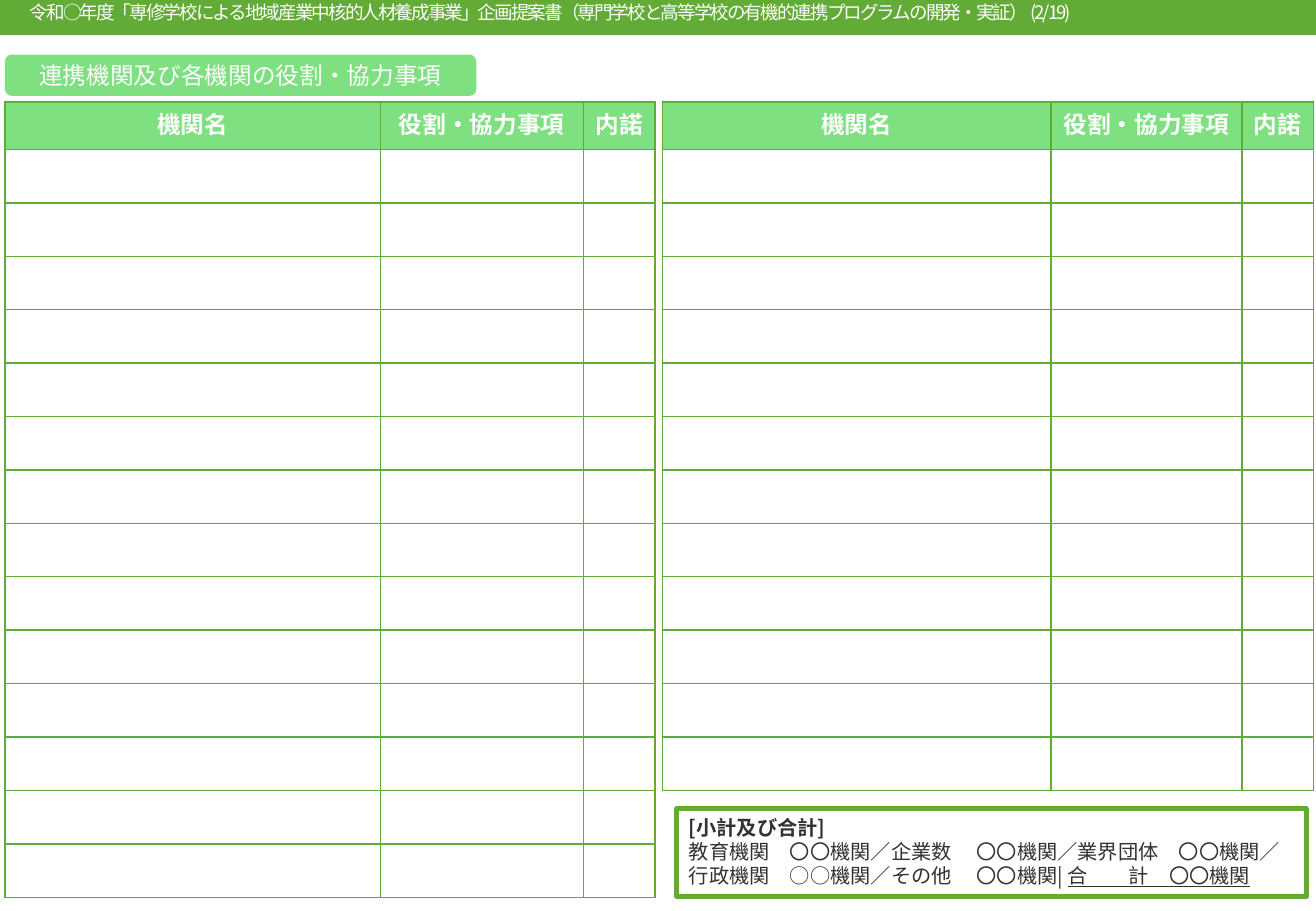
from lxml import etree
from pptx import Presentation
from pptx import util as u
from pptx.dml.color import RGBColor
from pptx.enum import shapes, text
from pptx.oxml import ns

PX = 9144  # EMU per px, 100 px to the inch
COLORS = {"green": "62AB37", "mint": "7EE081", "white": "FFFFFF", "ink": "323232"}
SANS, KARLA = "Noto Sans CJK JP", "Karla"
HEADINGS = ["機関名", "役割・協力事項", "内諾"]
HEADER_HEIGHT, ROW_HEIGHT = 39, 44


def px(*lengths):
    return [u.Emu(length * PX) for length in lengths]


def color(name):
    return RGBColor.from_string(COLORS[name])


def add_run(paragraph, words, size, font, ink, bold=False, underline=False, spacing=None):
    run = paragraph.add_run()
    run.text = words
    run.font.size = u.Pt(size)
    run.font.name = font
    run.font.bold = bold
    run.font.underline = underline
    run.font.color.rgb = color(ink)
    properties = run.font._element
    east_asian = etree.SubElement(properties, ns.qn("a:ea"))
    east_asian.set("typeface", font)
    if spacing is not None:
        properties.set("spc", str(spacing))


def add_box(slide, kind, box, fill=None, line=None):
    shape = slide.shapes.add_shape(kind, *px(*box))
    shape.shadow.inherit = False
    if fill:
        shape.fill.solid()
        shape.fill.fore_color.rgb = color(fill)
    else:
        shape.fill.background()
    if line:
        shape.line.color.rgb = color(line)
        shape.line.width = u.Pt(3)
    else:
        shape.line.fill.background()
    return shape


def style_borders(cell):
    properties = cell._tc.get_or_add_tcPr()
    for index, side in enumerate(["a:lnL", "a:lnR", "a:lnT", "a:lnB"]):
        border = etree.Element(ns.qn(side), w=str(u.Pt(1)))
        fill = etree.SubElement(border, ns.qn("a:solidFill"))
        etree.SubElement(fill, ns.qn("a:srgbClr"), val=COLORS["green"])
        properties.insert(index, border)


def add_institution_table(slide, left, top, widths, body_rows):
    height = HEADER_HEIGHT + body_rows * ROW_HEIGHT
    frame = slide.shapes.add_table(body_rows + 1, len(widths),
                                   *px(left, top, sum(widths), height))
    table = frame.table
    table.horz_banding = False
    for column, width in zip(table.columns, widths):
        column.width = u.Emu(width * PX)
    for index, row in enumerate(table.rows):
        row.height = u.Emu((ROW_HEIGHT if index else HEADER_HEIGHT) * PX)
        for cell, heading in zip(row.cells, HEADINGS):
            if index:
                cell.fill.background()
                cell.margin_top = cell.margin_bottom = 0
            else:
                cell.fill.solid()
                cell.fill.fore_color.rgb = color("mint")
                cell.vertical_anchor = text.MSO_ANCHOR.MIDDLE
                paragraph = cell.text_frame.paragraphs[0]
                paragraph.alignment = text.PP_ALIGN.CENTER
                add_run(paragraph, heading, 14, KARLA, "white", bold=True)
            style_borders(cell)


def add_section_label(slide, box, words):
    label = add_box(slide, shapes.MSO_SHAPE.ROUNDED_RECTANGLE, box, fill="mint")
    label.text_frame.vertical_anchor = text.MSO_ANCHOR.MIDDLE
    paragraph = label.text_frame.paragraphs[0]
    paragraph.alignment = text.PP_ALIGN.CENTER
    add_run(paragraph, words, 14, SANS, "white")


def add_totals(slide, box, lines):
    frame = add_box(slide, shapes.MSO_SHAPE.RECTANGLE, box, line="green").text_frame
    frame.word_wrap = True
    frame.vertical_anchor = text.MSO_ANCHOR.TOP
    for index, runs in enumerate(lines):
        paragraph = frame.add_paragraph() if index else frame.paragraphs[0]
        paragraph.alignment = text.PP_ALIGN.LEFT
        paragraph.line_spacing = u.Pt(14.4)
        for words, style in runs:
            add_run(paragraph, words, 12, SANS, "ink", **style)


def add_page_title(slide, box, words):
    frame = slide.shapes.add_textbox(*px(*box)).text_frame
    frame.word_wrap = True
    frame.margin_top, frame.margin_bottom = px(2, 0)
    paragraph = frame.paragraphs[0]
    paragraph.alignment = text.PP_ALIGN.CENTER
    add_run(paragraph, words, 11, SANS, "white", spacing=-120)


def main():
    presentation = Presentation()
    presentation.slide_width, presentation.slide_height = px(1083, 750)
    slide = presentation.slides.add_slide(presentation.slide_layouts[6])

    # Section label
    add_section_label(slide, (4, 45, 388, 34), "連携機関及び各機関の役割・協力事項")

    # Subtotals and total
    add_totals(slide, (557, 666, 518, 72), [
        [("[小計及び合計]", {"bold": True})],
        [("教育機関　〇〇機関／企業数　 〇〇機関／業界団体　〇〇機関／", {})],
        [("行政機関　○○機関／その他　 〇〇機関| ", {}),
         ("合　　計　〇〇機関", {"underline": True})],
    ])

    # Institution lists
    add_institution_table(slide, 4, 84, [309, 167, 59], 14)
    add_institution_table(slide, 545, 84, [320, 157, 59], 12)

    # Title bar
    add_box(slide, shapes.MSO_SHAPE.RECTANGLE, (0, 0, 1083, 29), fill="green")
    add_page_title(slide, (-6, -1, 918, 29),
                   "令和○年度「専修学校による地域産業中核的人材養成事業」企画提案書"
                   "（専門学校と高等学校の有機的連携プログラムの開発・実証） (2/19)")

    presentation.save("out.pptx")


if __name__ == "__main__":
    main()
